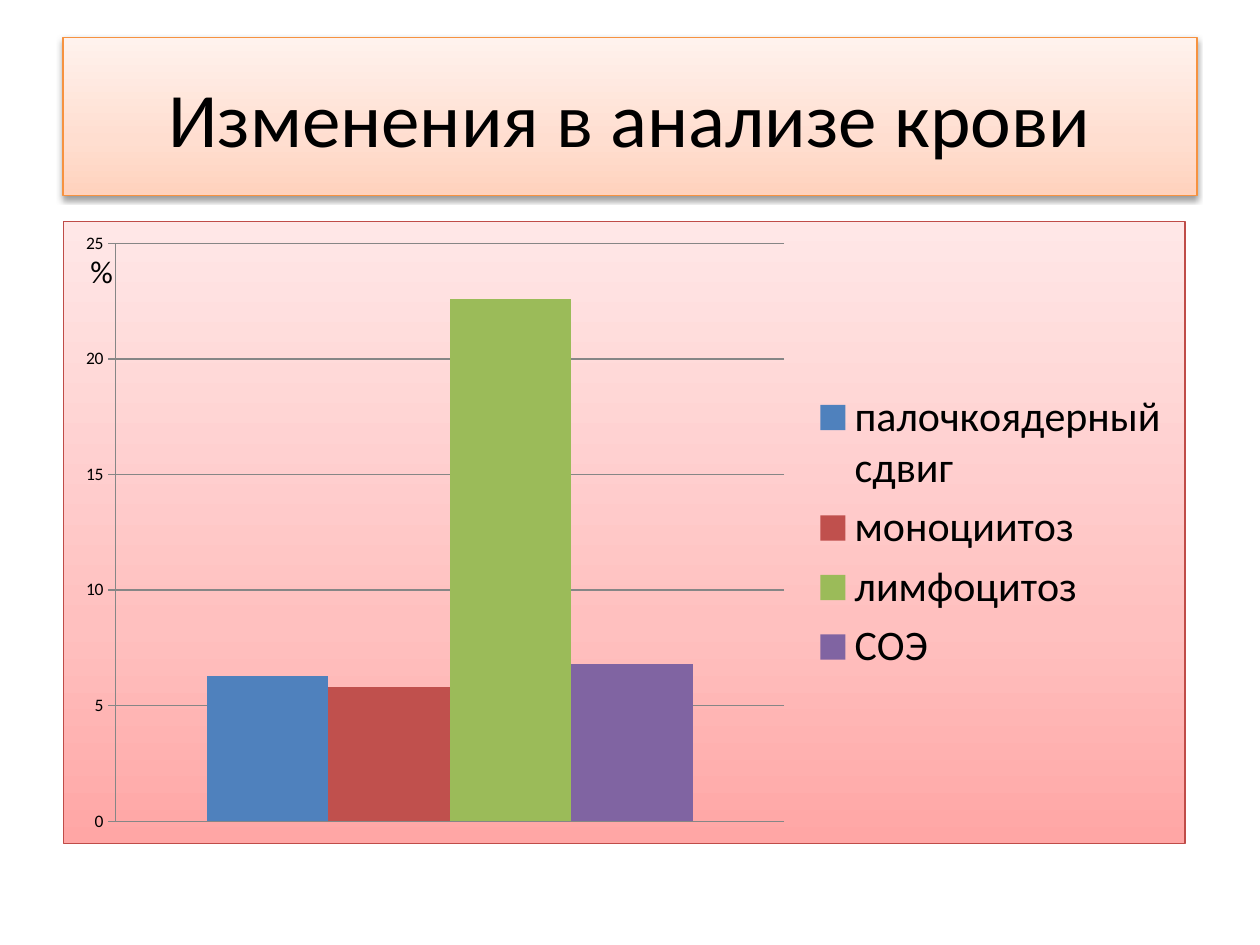
"""Build a slide with a title banner and a clustered column chart of blood test changes."""
from dataclasses import dataclass

from lxml import etree
from pptx import Presentation
from pptx import util as u
from pptx.chart.data import CategoryChartData
from pptx.dml.color import RGBColor
from pptx.enum import chart as charts, shapes, text
from pptx.oxml import parse_xml
from pptx.oxml.ns import nsdecls, qn

FONT = "Calibri"
BLACK = "000000"


@dataclass(frozen=True)
class Box:
    left: float
    top: float
    width: float
    height: float

    def lengths(self) -> list[u.Length]:
        return [u.Inches(side) for side in (self.left, self.top, self.width, self.height)]


@dataclass(frozen=True)
class Panel:
    box: Box
    bottom: str
    middle: str
    top: str
    border: str


@dataclass(frozen=True)
class Measure:
    name: str
    value: float
    color: str


TITLE_PANEL = Panel(Box(0.5, 0.3, 9, 1.25), "FFD2BD", "FFDED0", "FFF2ED", "F69240")
CHART_PANEL = Panel(Box(0.5, 1.75, 8.91, 4.95), "FFA6A5", "FFC0BF", "FFE7E7", "BF4C48")
UNIT_BOX = Box(0.62, 1.95, 0.44, 0.4)
MEASURES = [
    Measure("палочкоядерный сдвиг", 6.3, "4F81BD"),
    Measure("моноциитоз", 5.8, "C0504D"),
    Measure("лимфоцитоз", 22.6, "9BBB59"),
    Measure("СОЭ", 6.8, "8064A2"),
]


def rgb(color: str) -> RGBColor:
    return RGBColor.from_string(color)


def set_attributes(target, values: dict) -> None:
    for name, value in values.items():
        setattr(target, name, value)


def style_font(font, size: float) -> None:
    set_attributes(font, {"name": FONT, "size": u.Pt(size)})
    font.color.rgb = rgb(BLACK)


def add_panel_style(properties, panel: Panel) -> None:
    stops = "".join(
        f'<a:gs pos="{position * 1000}"><a:srgbClr val="{color}"/></a:gs>'
        for position, color in ((0, panel.bottom), (35, panel.middle), (100, panel.top))
    )
    properties.append(parse_xml(
        f'<a:gradFill {nsdecls("a")} rotWithShape="1"><a:gsLst>{stops}</a:gsLst>'
        '<a:lin ang="16200000" scaled="1"/></a:gradFill>'
    ))
    properties.append(parse_xml(
        f'<a:ln {nsdecls("a")} w="{u.Pt(0.75)}"><a:solidFill>'
        f'<a:srgbClr val="{panel.border}"/></a:solidFill></a:ln>'
    ))


def add_shadow(shape) -> None:
    shape.shadow.inherit = False
    shape._element.spPr.find(qn("a:effectLst")).append(parse_xml(
        f'<a:outerShdw {nsdecls("a")} blurRad="{u.Pt(3.1)}" dist="{u.Pt(1.6)}" '
        f'dir="5400000" rotWithShape="0"><a:srgbClr val="{BLACK}">'
        '<a:alpha val="38000"/></a:srgbClr></a:outerShdw>'
    ))


def write_text(shape, content: str, size: float, alignment, frame_format: dict) -> None:
    set_attributes(shape.text_frame, frame_format)
    paragraph = shape.text_frame.paragraphs[0]
    paragraph.alignment = alignment
    run = paragraph.add_run()
    run.text = content
    style_font(run.font, size)


def add_title(slide, panel: Panel, content: str) -> None:
    shape = slide.shapes.add_shape(shapes.MSO_SHAPE.RECTANGLE, *panel.box.lengths())
    add_panel_style(shape._element.spPr, panel)
    add_shadow(shape)
    write_text(shape, content, 44, text.PP_ALIGN.CENTER,
               {"word_wrap": True, "vertical_anchor": text.MSO_ANCHOR.MIDDLE})


def add_blood_chart(slide, panel: Panel, measures: list[Measure]) -> None:
    data = CategoryChartData()
    data.categories = ["1"]
    for measure in measures:
        data.add_series(measure.name, [measure.value])
    chart = slide.shapes.add_chart(
        charts.XL_CHART_TYPE.COLUMN_CLUSTERED, *panel.box.lengths(), data
    ).chart
    set_attributes(chart, {"has_title": False, "has_legend": True})
    style_font(chart.font, 10)
    set_attributes(chart.legend, {
        "position": charts.XL_LEGEND_POSITION.RIGHT, "include_in_layout": False,
    })
    style_font(chart.legend.font, 24)

    plot = chart.plots[0]
    set_attributes(plot, {"gap_width": 150, "overlap": 0, "vary_by_categories": False})
    for series, measure in zip(plot.series, measures):
        series.format.fill.solid()
        series.format.fill.fore_color.rgb = rgb(measure.color)

    chart.category_axis.visible = False
    axis = chart.value_axis
    set_attributes(axis, {
        "minimum_scale": 0, "maximum_scale": 25, "major_unit": 5,
        "has_major_gridlines": True, "major_tick_mark": charts.XL_TICK_MARK.CROSS,
    })
    for line in (axis.format.line, axis.major_gridlines.format.line):
        line.color.rgb = rgb("868686")
        line.width = u.Pt(0.75)

    chart_space = chart._chartSpace
    properties = etree.Element(qn("c:spPr"))
    add_panel_style(properties, panel)
    chart_space.find(qn("c:chart")).addnext(properties)


def add_unit_label(slide, box: Box, content: str) -> None:
    shape = slide.shapes.add_textbox(*box.lengths())
    write_text(shape, content, 18, text.PP_ALIGN.LEFT,
               {"word_wrap": False, "auto_size": text.MSO_AUTO_SIZE.SHAPE_TO_FIT_TEXT})


def main() -> None:
    presentation = Presentation()
    set_attributes(presentation, {"slide_width": u.Inches(10), "slide_height": u.Inches(7.5)})
    slide = presentation.slides.add_slide(presentation.slide_layouts[6])
    add_title(slide, TITLE_PANEL, "Изменения в анализе крови")
    add_blood_chart(slide, CHART_PANEL, MEASURES)
    add_unit_label(slide, UNIT_BOX, "%")
    presentation.save("out.pptx")


if __name__ == "__main__":
    main()
